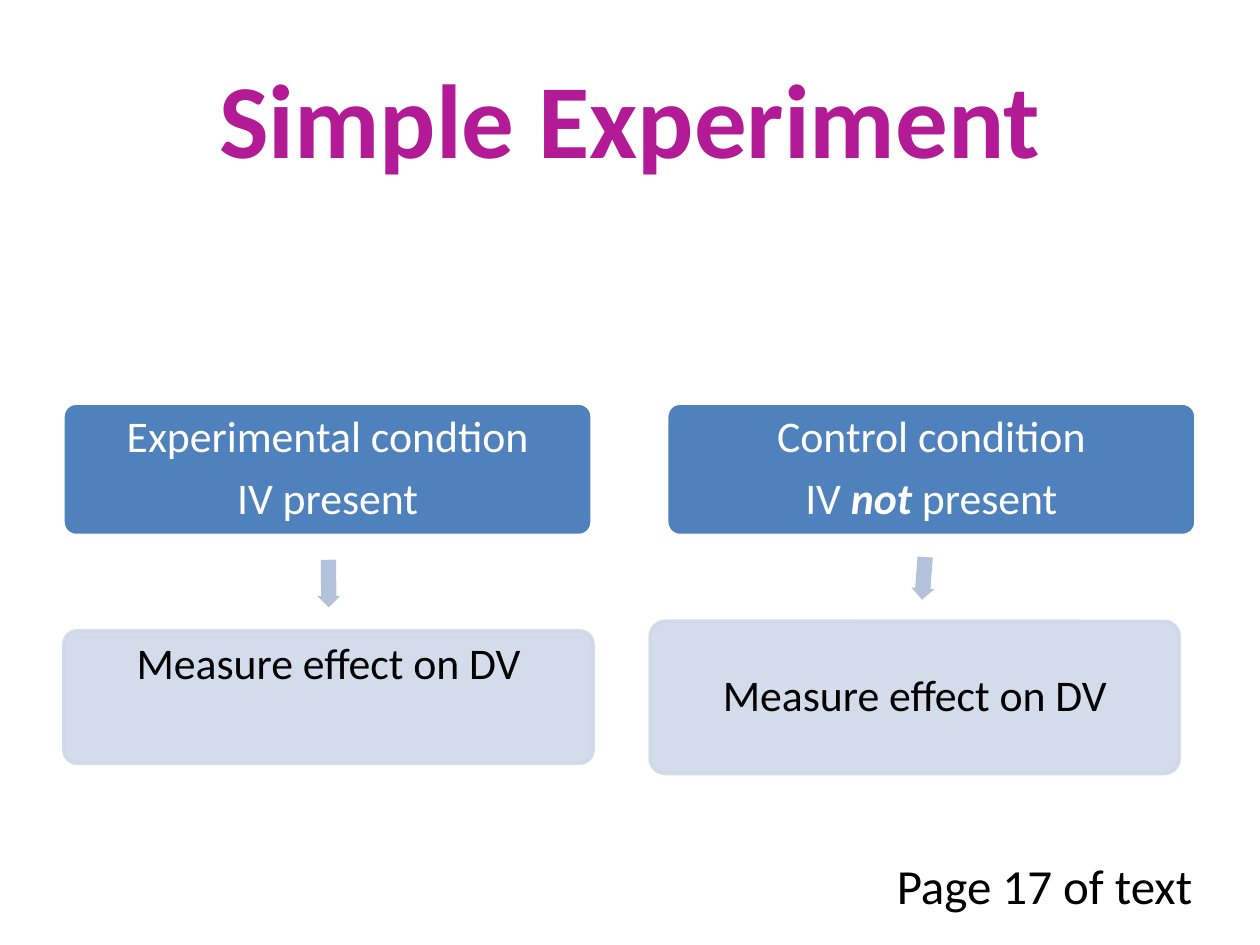
from pptx import Presentation
from pptx.dml.color import RGBColor as RGB
from pptx.enum.shapes import MSO_SHAPE as Kind
from pptx.enum.text import MSO_ANCHOR as Anchor, PP_ALIGN as Align
from pptx.oxml.xmlchemy import OxmlElement as Node
from pptx.util import Pt


def paint(part, tint, alpha=100):
    part.solid()
    part.fore_color.rgb = RGB.from_string(tint)
    if alpha < 100:
        node = Node("a:alpha")
        node.set("val", str(alpha * 1000))
        for color in part._xPr.iter("{*}srgbClr"):
            color.append(node)


def write(frame, lines, size, tint, align, para={}, **look):
    frame.word_wrap = True
    for name, value in look.items():
        setattr(frame, name, value)
    for i, line in enumerate(lines):
        p = frame.add_paragraph() if i else frame.paragraphs[0]
        p.alignment = align
        for name, value in para.items():
            setattr(p, name, value)
        for text, font in line:
            run = p.add_run()
            run.text = text
            style = {"name": "Calibri", "size": Pt(size), **font}
            for name, value in style.items():
                setattr(run.font, name, value)
            run.font.color.rgb = RGB.from_string(tint)


deck = Presentation()
deck.slide_width, deck.slide_height = Pt(720), Pt(540)
slide = deck.slides.add_slide(deck.slide_layouts[6])
shapes = slide.shapes

title = shapes.add_textbox(Pt(36), Pt(21.6), Pt(648), Pt(90))
write(title.text_frame, [[("Simple Experiment", {"bold": True})]], 60, "B31B96",
      Align.CENTER, vertical_anchor=Anchor.MIDDLE)

plain, strong = {}, {"bold": True, "italic": True}
effect = [[("Measure effect on DV", plain)]]
given = [[("Experimental condtion", plain)], [("IV present", plain)]]
control = [[("Control condition", plain)],
           [("IV", plain), (" not ", strong), ("present", plain)]]
dark = ("4F81BD", "FFFFFF", "FFFFFF", 100)
light = ("D0D8E8", "D0D8E8", "000000", 90)
mid, top = Anchor.MIDDLE, Anchor.TOP
boxes = [
    (36, 230.4, 75.6, given, dark, mid, 2),
    (36.5, 360.5, 75.6, effect, light, top, 4),
    (381, 230.4, 75.6, control, dark, mid, 2),
    (371.5, 355, 87, effect, light, mid, 2),
]
for x, y, high, lines, (fill, edge, ink, alpha), anchor, gap in boxes:
    box = shapes.add_shape(Kind.ROUNDED_RECTANGLE, Pt(x), Pt(y), Pt(302.4), Pt(high))
    box.adjustments[0] = 0.1
    box.shadow.inherit = False
    paint(box.fill, fill, alpha)
    paint(box.line.fill, edge, alpha)
    box.line.width = Pt(2)
    write(box.text_frame, lines, 25, ink, Align.CENTER,
          {"line_spacing": 0.9, "space_after": Pt(8)},
          vertical_anchor=anchor, margin_left=Pt(2), margin_right=Pt(2),
          margin_top=Pt(gap), margin_bottom=Pt(2))

for x, y, wide, turn in [(174.2, 327, 27.2, 89.7), (515.5, 324, 24.5, 94.3)]:
    arrow = shapes.add_shape(Kind.RIGHT_ARROW, Pt(x), Pt(y), Pt(wide), Pt(13))
    arrow.adjustments[0] = 0.67
    arrow.rotation = turn
    arrow.shadow.inherit = False
    paint(arrow.fill, "B3C1DB")
    arrow.line.fill.background()

page = shapes.add_textbox(Pt(427.7), Pt(485.3), Pt(260.6), Pt(41))
write(page.text_frame, [[("Page 17 of text", plain)]], 28, "000000", Align.RIGHT)

deck.save("out.pptx")
